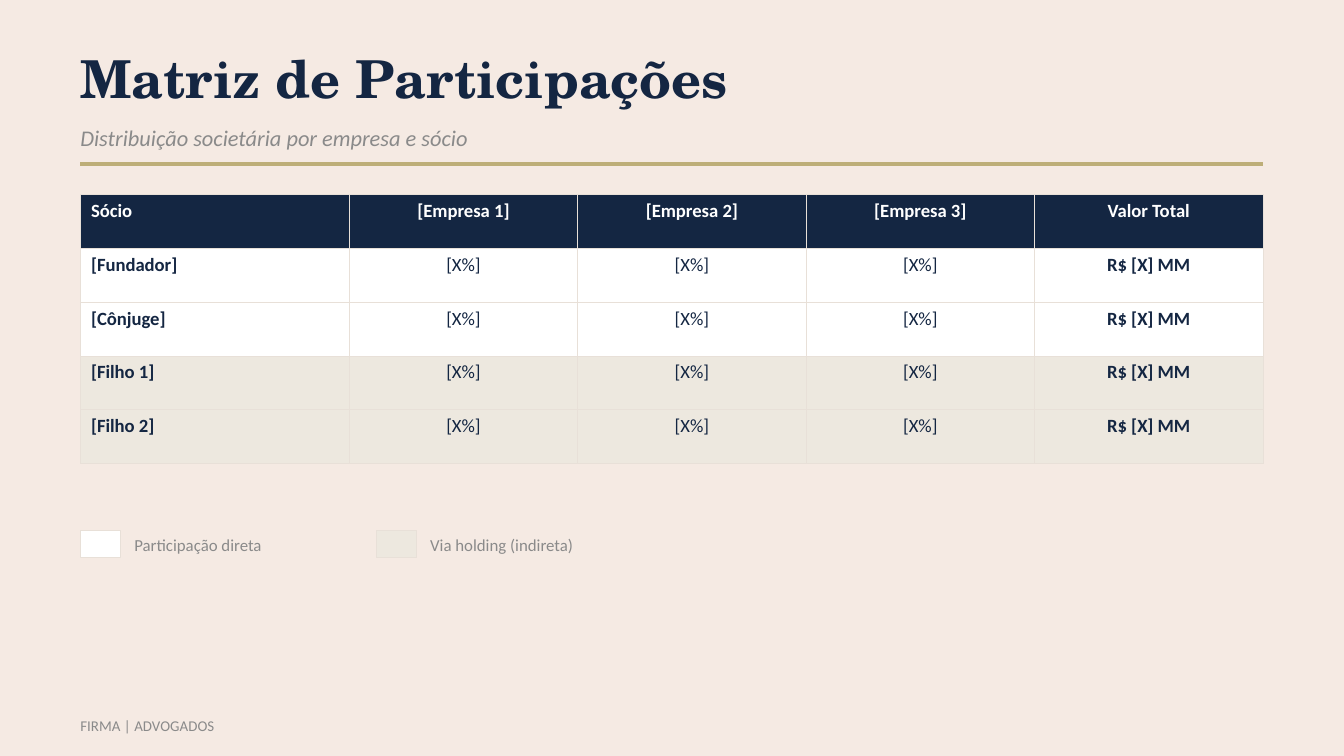
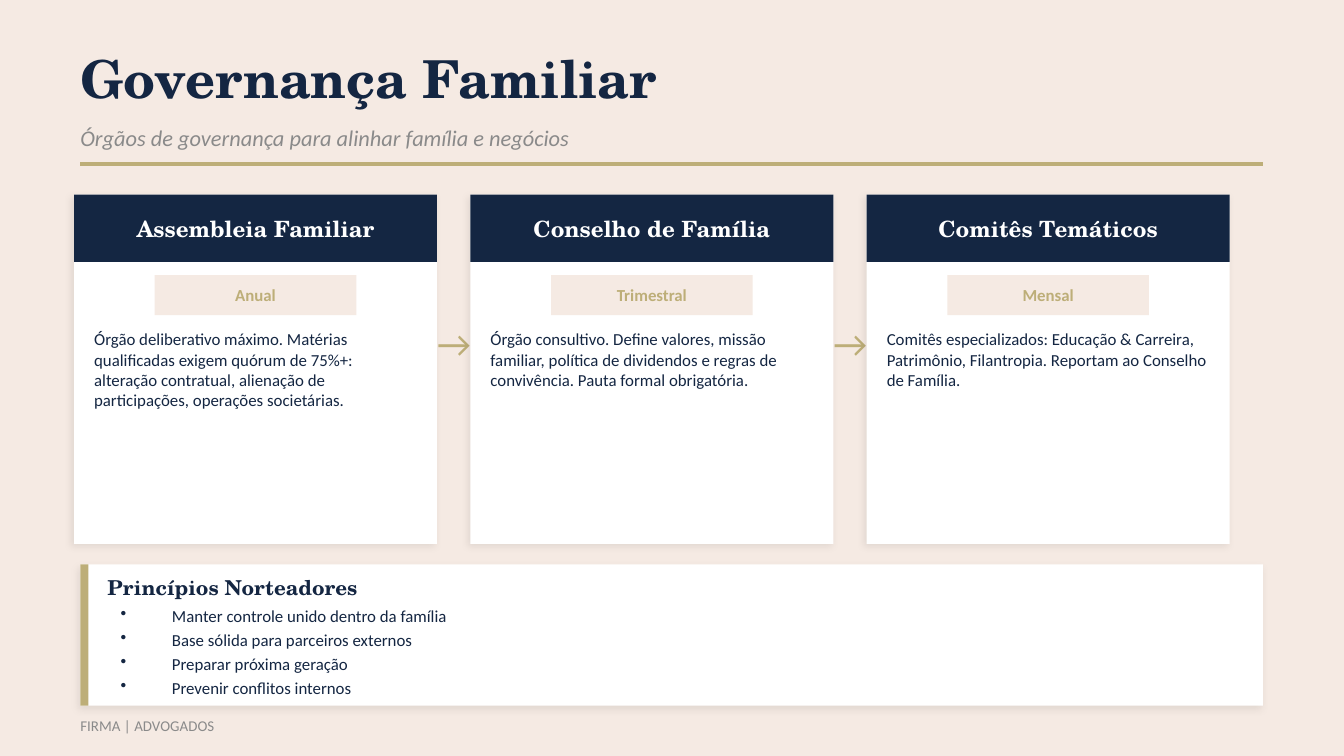
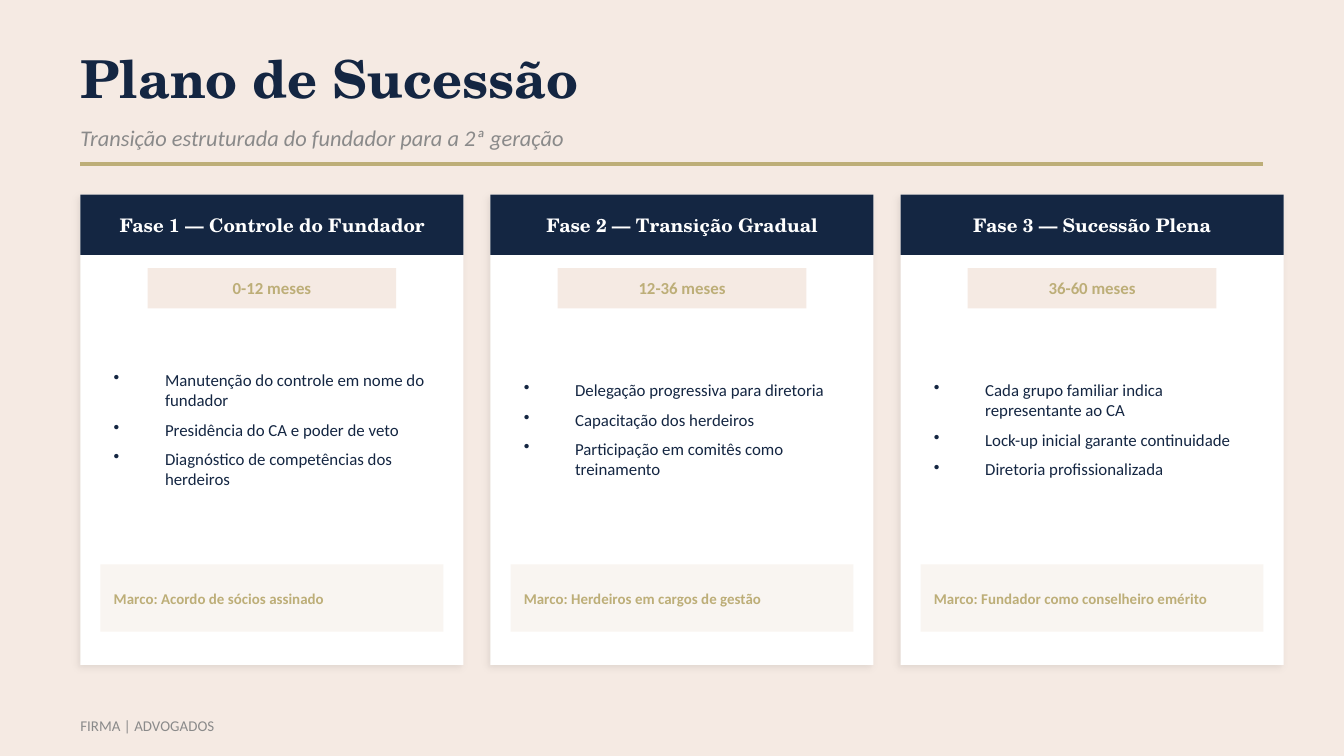
import pptx
import pptx.dml.color
import pptx.enum.shapes
import pptx.enum.text
import pptx.oxml
import pptx.oxml.ns
import pptx.util
from lxml import etree

Cm = pptx.util.Cm
Pt = pptx.util.Pt
RGBColor = pptx.dml.color.RGBColor
ALIGN = pptx.enum.text.PP_ALIGN
ANCHOR = pptx.enum.text.MSO_ANCHOR
SHAPE = pptx.enum.shapes.MSO_SHAPE
LINE = pptx.enum.shapes.MSO_CONNECTOR
qn = pptx.oxml.ns.qn

# Shared look
NAVY = RGBColor(0x14, 0x26, 0x42)
GOLD = RGBColor(0xBD, 0xAE, 0x78)
BLUSH = RGBColor(0xF5, 0xEA, 0xE3)
SAND = RGBColor(0xED, 0xE8, 0xDF)
CREAM = RGBColor(0xF9, 0xF5, 0xF1)
EDGE = RGBColor(0xE8, 0xE0, 0xD8)
GREY = RGBColor(0x8A, 0x8A, 0x8A)
WHITE = RGBColor(0xFF, 0xFF, 0xFF)
SERIF, SANS = "TeX Gyre Schola", "Calibri"

# Shared layout, in centimetres
LEFT, WIDTH, TOP = 1.52, 22.35, 3.68
PAD, GAP = 0.38, 0.25

# Content
HEADS = ["Sócio", "[Empresa 1]", "[Empresa 2]", "[Empresa 3]", "Valor Total"]
OWNERS = [("[Fundador]", WHITE), ("[Cônjuge]", WHITE),
          ("[Filho 1]", SAND), ("[Filho 2]", SAND)]
KEYS = [("Participação direta", WHITE), ("Via holding (indireta)", SAND)]
BOARDS = [
    ("Assembleia Familiar", "Anual",
     "Órgão deliberativo máximo. Matérias qualificadas exigem quórum de 75%+: "
     "alteração contratual, alienação de participações, operações societárias."),
    ("Conselho de Família", "Trimestral",
     "Órgão consultivo. Define valores, missão familiar, política de dividendos "
     "e regras de convivência. Pauta formal obrigatória."),
    ("Comitês Temáticos", "Mensal",
     "Comitês especializados: Educação & Carreira, Patrimônio, Filantropia. "
     "Reportam ao Conselho de Família."),
]
RULES = ["Manter controle unido dentro da família",
         "Base sólida para parceiros externos",
         "Preparar próxima geração",
         "Prevenir conflitos internos"]
PHASES = [
    ("Fase 1 — Controle do Fundador", "0-12 meses",
     ["Manutenção do controle em nome do fundador",
      "Presidência do CA e poder de veto",
      "Diagnóstico de competências dos herdeiros"],
     "Marco: Acordo de sócios assinado"),
    ("Fase 2 — Transição Gradual", "12-36 meses",
     ["Delegação progressiva para diretoria",
      "Capacitação dos herdeiros",
      "Participação em comitês como treinamento"],
     "Marco: Herdeiros em cargos de gestão"),
    ("Fase 3 — Sucessão Plena", "36-60 meses",
     ["Cada grupo familiar indica representante ao CA",
      "Lock-up inicial garante continuidade",
      "Diretoria profissionalizada"],
     "Marco: Fundador como conselheiro emérito"),
]


def style(run, size, color, face=SANS, bold=False, italic=False):
    font = run.font
    font.name, font.size = face, Pt(size)
    font.bold, font.italic = bold, italic
    font.color.rgb = color


def text(slide, box, words, size, color, align=ALIGN.LEFT,
         anchor=ANCHOR.MIDDLE, **look):
    frame = slide.shapes.add_textbox(*map(Cm, box)).text_frame
    frame.word_wrap = True
    frame.vertical_anchor = anchor
    frame.margin_left = frame.margin_right = 0
    frame.margin_top = frame.margin_bottom = 0
    para = frame.paragraphs[0]
    para.alignment = align
    run = para.add_run()
    run.text = words
    style(run, size, color, **look)


def bullets(slide, box, items, after):
    frame = slide.shapes.add_textbox(*map(Cm, box)).text_frame
    frame.word_wrap = True
    frame.vertical_anchor = ANCHOR.MIDDLE
    for num, item in enumerate(items):
        para = frame.add_paragraph() if num else frame.paragraphs[0]
        props = para._p.get_or_add_pPr()
        props.set("marL", str(Cm(0.97)))
        props.set("indent", str(-Cm(0.97)))
        etree.SubElement(props, qn("a:buChar")).set("char", "•")
        para.space_after = Pt(after)
        run = para.add_run()
        run.text = item
        style(run, 9, NAVY)


def rect(slide, box, fill, edge=None, shade=False):
    shape = slide.shapes.add_shape(SHAPE.RECTANGLE, *map(Cm, box))
    shape.shadow.inherit = False
    shape.fill.solid()
    shape.fill.fore_color.rgb = fill
    if edge is None:
        shape.line.fill.background()
    else:
        shape.line.color.rgb = edge
        shape.line.width = Pt(0.5)
    if shade:
        glow = etree.SubElement(
            shape._element.spPr.find(qn("a:effectLst")), qn("a:outerShdw"),
            blurRad=str(Pt(4)), dist=str(Pt(2)), dir=str(135 * 60000),
            algn="bl", rotWithShape="0")
        tint = etree.SubElement(glow, qn("a:srgbClr"), val="000000")
        etree.SubElement(tint, qn("a:alpha"), val="8000")


def label(slide, box, fill, words, size, color, **look):
    """A filled band with centred bold text."""
    rect(slide, box, fill)
    text(slide, box, words, size, color, ALIGN.CENTER, bold=True, **look)


def page(deck, title, sub):
    """A slide with background, title, subtitle, rule and footer."""
    slide = deck.slides.add_slide(deck.slide_layouts[6])
    slide.background.fill.solid()
    slide.background.fill.fore_color.rgb = BLUSH
    text(slide, (LEFT, 0.76, WIDTH, 1.4), title, 28, NAVY, face=SERIF, bold=True)
    text(slide, (LEFT, 2.16, WIDTH, 0.89), sub, 12, GREY, italic=True)
    rule = slide.shapes.add_connector(
        LINE.STRAIGHT, Cm(LEFT), Cm(3.1), Cm(LEFT + WIDTH), Cm(3.1))
    rule.line.color.rgb = GOLD
    rule.line.width = Pt(2)
    etree.SubElement(rule._element.spPr, qn("a:effectLst"))
    text(slide, (LEFT, 13.34, 7.62, 0.76), "FIRMA | ADVOGADOS", 8, GREY)
    return slide


def borders(cell):
    props = cell._tc.get_or_add_tcPr()
    for num, side in enumerate(("lnL", "lnR", "lnT", "lnB")):
        line = etree.Element(qn("a:" + side), w=str(Pt(0.5)))
        fill = etree.SubElement(line, qn("a:solidFill"))
        etree.SubElement(fill, qn("a:srgbClr"), val=str(EDGE))
        props.insert(num, line)


def matrix(slide, box):
    rows = [(HEADS, NAVY)]
    rows += [([name] + ["[X%]"] * 3 + ["R$ [X] MM"], fill) for name, fill in OWNERS]
    table = slide.shapes.add_table(len(rows), len(HEADS), *map(Cm, box)).table
    table.first_row = table.horz_banding = False
    first = 5.08
    for num, col in enumerate(table.columns):
        col.width = Cm((box[2] - first) / (len(HEADS) - 1) if num else first)
    for r, (words, fill) in enumerate(rows):
        table.rows[r].height = Cm(box[3] / len(rows))
        for c, word in enumerate(words):
            cell = table.cell(r, c)
            cell.margin_left = cell.margin_right = Cm(0.2)
            cell.margin_top = cell.margin_bottom = Cm(0.1)
            cell.fill.solid()
            cell.fill.fore_color.rgb = fill
            borders(cell)
            para = cell.text_frame.paragraphs[0]
            para.alignment = ALIGN.CENTER if c else ALIGN.LEFT
            run = para.add_run()
            run.text = word
            style(run, 10, NAVY if r else WHITE,
                  bold=r == 0 or c in (0, len(words) - 1))


def legend(slide, box):
    x, y, step, high = box
    for num, (words, fill) in enumerate(KEYS):
        left = x + num * step
        rect(slide, (left, y + 0.05, 0.76, 0.51), fill, EDGE)
        text(slide, (left + 1.02, y, step - 0.5, high), words, 9, GREY)


def card(slide, box, title, size, head, tag, wide):
    """White card with title band and tag; returns the top of its body."""
    x, y, w, h = box
    rect(slide, box, WHITE, shade=True)
    label(slide, (x, y, w, head), NAVY, title, size, WHITE, face=SERIF)
    label(slide, (x + (w - wide) / 2, y + head + GAP, wide, 0.76),
          BLUSH, tag, 9, GOLD)
    return y + head + 1.27


def board(slide, box, title, tag, words):
    x, y, w, h = box
    body = card(slide, box, title, 12, 1.27, tag, 3.81)
    text(slide, (x + PAD, body, w - 2 * PAD, 3.81), words, 9, NAVY,
         anchor=ANCHOR.TOP)


def creed(slide, box):
    x, y, w, h = box
    rect(slide, box, WHITE, shade=True)
    rect(slide, (x, y, 0.15, h), GOLD)
    text(slide, (x + 0.51, y + 0.05, 7.62, 0.76), "Princípios Norteadores",
         11, NAVY, face=SERIF, bold=True)
    bullets(slide, (x + 0.51, y + 0.76, w - 1.02, 1.78), RULES, 2)


def phase(slide, box, title, tag, items, goal):
    x, y, w, h = box
    body = card(slide, box, title, 10, 1.14, tag, 4.7)
    wide = w - 2 * PAD
    bullets(slide, (x + PAD, body, wide, 4.06), items, 5)
    mark = y + h - 1.9
    rect(slide, (x + PAD, mark, wide, 1.27), CREAM)
    text(slide, (x + PAD + GAP, mark, wide - 2 * GAP, 1.27), goal, 8, GOLD,
         bold=True)


def shares(deck):
    slide = page(deck, "Matriz de Participações",
                 "Distribuição societária por empresa e sócio")
    matrix(slide, (LEFT, TOP, WIDTH, 5.08))
    legend(slide, (LEFT, 9.98, 5.59, 0.64))


def council(deck):
    slide = page(deck, "Governança Familiar",
                 "Órgãos de governança para alinhar família e negócios")
    wide, gap = 6.86, 0.63
    for num, item in enumerate(BOARDS):
        x = 1.4 + num * (wide + gap)
        if num:
            text(slide, (x - gap, TOP + 2.16, gap, 1.27), "→", 20, GOLD,
                 ALIGN.CENTER)
        board(slide, (x, TOP, wide, 6.6), *item)
    creed(slide, (LEFT, 10.67, WIDTH, 2.67))


def handover(deck):
    slide = page(deck, "Plano de Sucessão",
                 "Transição estruturada do fundador para a 2ª geração")
    wide, gap = 7.24, 0.51
    for num, item in enumerate(PHASES):
        phase(slide, (LEFT + num * (wide + gap), TOP, wide, 8.89), *item)


def main():
    deck = pptx.Presentation()
    deck.slide_width, deck.slide_height = Cm(25.4), Cm(14.29)
    shares(deck)
    council(deck)
    handover(deck)
    deck.save("out.pptx")


if __name__ == "__main__":
    main()
